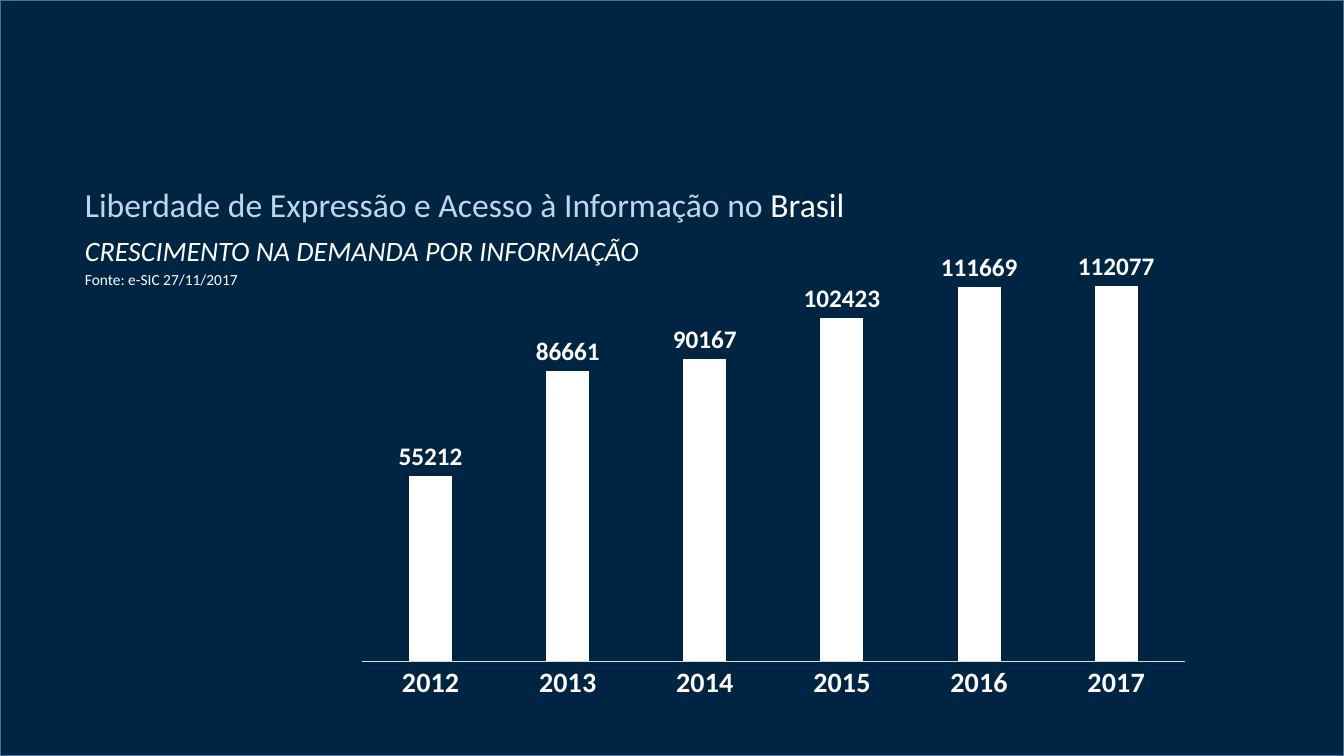
import pptx
import pptx.chart.data
import pptx.dml.color
import pptx.enum.chart
import pptx.enum.shapes
import pptx.enum.text
import pptx.oxml
import pptx.util

W, H = 1344, 756
SCALE = 12192000 / W
FONT = "Calibri"
COLORS = {"navy": "002543", "border": "43739E", "sky": "BDD7EE",
          "white": "FFFFFF", "axis": "D9D9D9"}
DEMAND = {"2012": 55212, "2013": 86661, "2014": 90167,
          "2015": 102423, "2016": 111669, "2017": 112077}
LAYOUT = (
    '<c:layout xmlns:c="http://schemas.openxmlformats.org/drawingml/2006/chart">'
    '<c:manualLayout><c:layoutTarget val="inner"/>'
    '<c:xMode val="edge"/><c:yMode val="edge"/>'
    '<c:x val="0.02"/><c:y val="0.02"/><c:w val="0.96"/><c:h val="0.88"/>'
    '</c:manualLayout></c:layout>')


def px(n):
    """Turn px into EMU."""
    return pptx.util.Emu(round(n * SCALE))


def rgb(name):
    """Look up a named colour."""
    return pptx.dml.color.RGBColor.from_string(COLORS[name])


def style_font(font, size, color, bold=False, italic=False):
    """Set the face, size and colour of a font."""
    font.name, font.size = FONT, pptx.util.Pt(size)
    font.bold, font.italic = bold, italic
    font.color.rgb = rgb(color)


def add_background(s, x, y, w, h):
    """Fill the box with the outlined navy panel."""
    sp = s.shapes.add_shape(pptx.enum.shapes.MSO_SHAPE.RECTANGLE,
                            px(x), px(y), px(w), px(h))
    sp.shadow.inherit = False
    sp.fill.solid()
    sp.fill.fore_color.rgb = rgb("navy")
    sp.line.color.rgb = rgb("border")
    sp.line.width = pptx.util.Pt(1)


def add_text(s, x, y, w, h, runs, size, italic=False):
    """Place one unwrapped line made of (text, colour) runs."""
    tf = s.shapes.add_textbox(px(x), px(y), px(w), px(h)).text_frame
    tf.word_wrap = False
    tf.auto_size = pptx.enum.text.MSO_AUTO_SIZE.SHAPE_TO_FIT_TEXT
    p = tf.paragraphs[0]
    for text, color in runs:
        r = p.add_run()
        r.text = text
        style_font(r.font, size, color, italic=italic)


def add_heading(s, x, y, w):
    """Stack the title, subtitle and source line in the box."""
    add_text(s, x, y, w, 50,
             [("Liberdade de Expressão e Acesso à Informação no ", "sky"),
              ("Brasil", "white")], 24)
    add_text(s, x, y + 50, 580, 44,
             [("CRESCIMENTO NA DEMANDA POR INFORMAÇÃO", "white")], 20, italic=True)
    add_text(s, x, y + 86, 175, 29, [("Fonte: e-SIC 27/11/2017", "white")], 11)


def add_demand_chart(s, x, y, w, h):
    """Draw the yearly demand columns in the box."""
    data = pptx.chart.data.CategoryChartData()
    data.categories = list(DEMAND)
    data.add_series("Series 1", list(DEMAND.values()))
    chart = s.shapes.add_chart(pptx.enum.chart.XL_CHART_TYPE.COLUMN_CLUSTERED,
                               px(x), px(y), px(w), px(h), data).chart
    chart.has_legend = chart.has_title = False
    style_font(chart.font, 10, "white")

    area = chart.plots[0]._element.getparent()
    for old in area.findall(pptx.oxml.ns.qn("c:layout")):
        area.remove(old)
    area.insert(0, pptx.oxml.parse_xml(LAYOUT))

    va = chart.value_axis
    va.visible = va.has_major_gridlines = False
    va.minimum_scale, va.maximum_scale = 0, 120000

    ca = chart.category_axis
    ca.major_tick_mark = pptx.enum.chart.XL_TICK_MARK.NONE
    ca.format.line.color.rgb = rgb("axis")
    ca.format.line.width = pptx.util.Pt(0.75)
    style_font(ca.tick_labels.font, 20, "white", bold=True)

    plot = chart.plots[0]
    plot.gap_width, plot.overlap = 219, -27
    plot.vary_by_categories = False
    series = plot.series[0]
    series.format.fill.solid()
    series.format.fill.fore_color.rgb = rgb("white")
    labels = series.data_labels
    labels.show_value = True
    labels.position = pptx.enum.chart.XL_LABEL_POSITION.OUTSIDE_END
    style_font(labels.font, 18, "white", bold=True)


def main():
    """Build the slide and save it."""
    prs = pptx.Presentation()
    prs.slide_width, prs.slide_height = px(W), px(H)
    s = prs.slides.add_slide(prs.slide_layouts[6])
    add_background(s, 0, 0, W, H)
    add_heading(s, 75, 179, 787)
    add_demand_chart(s, 345, 250, 857, 457)
    prs.save("out.pptx")


if __name__ == "__main__":
    main()
